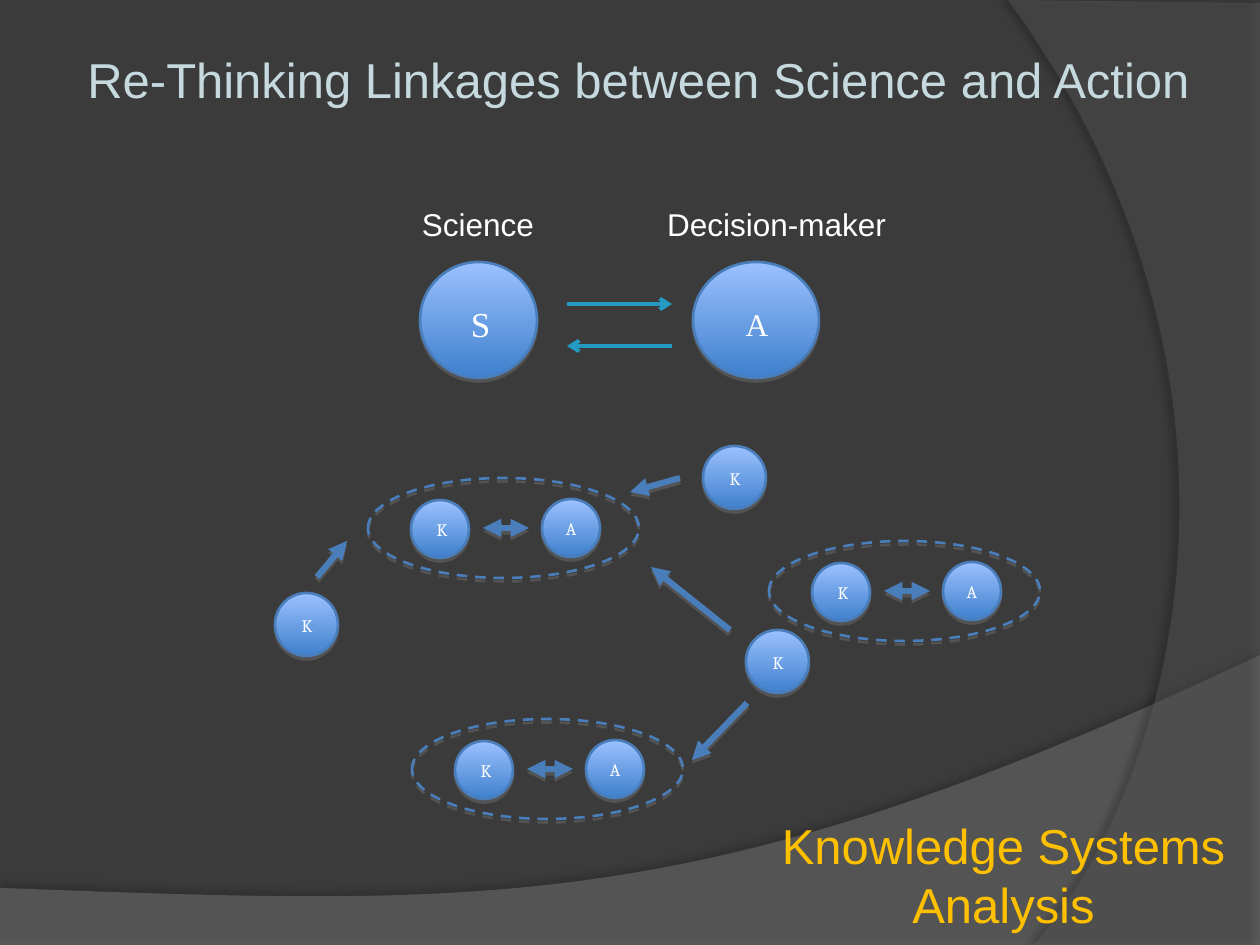
"""Build the slide on linkages between science and action."""
from lxml import etree
from pptx import Presentation
from pptx import util as u
from pptx.dml.color import RGBColor
from pptx.enum import dml, shapes, text
from pptx.oxml.ns import qn

BACKGROUND = RGBColor(0x3B, 0x3B, 0x3B)
WAVE = RGBColor(0x7F, 0x7F, 0x7F)
ARC = RGBColor(0x5E, 0x5E, 0x5E)
TITLE = RGBColor(0xC5, 0xD9, 0xDF)
WHITE = RGBColor(0xFF, 0xFF, 0xFF)
GOLD = RGBColor(0xFF, 0xC0, 0x00)
TEAL = RGBColor(0x23, 0x9B, 0xC2)
BLUE = RGBColor(0x4A, 0x7E, 0xBB)
NODE_TOP = RGBColor(0x9B, 0xC1, 0xFF)
NODE_BOTTOM = RGBColor(0x3F, 0x80, 0xCD)
BLACK = RGBColor(0, 0, 0)
GREY = RGBColor(0x80, 0x80, 0x80)
SOFT_SHADOW = (GREY, 35, 0, 2, 90)


class Diagram:
    """Hold the style and the current slide."""

    def __init__(self, presentation):
        self.scale = u.Inches(1) / 126
        presentation.slide_width = self.px(1260)
        presentation.slide_height = self.px(945)
        self.slide = presentation.slides.add_slide(presentation.slide_layouts[6])
        fill = self.slide.background.fill
        fill.solid()
        fill.fore_color.rgb = BACKGROUND
        self.canvas = self.slide.shapes

    def px(self, length):
        return u.Emu(round(length * self.scale))

    def box(self, *lengths):
        return [self.px(length) for length in lengths]

    def apply(self, target, values):
        for name, value in values.items():
            setattr(target, name, value)

    def group(self):
        return self.slide.shapes.add_group_shape().shapes

    def alpha(self, color, percent):
        etree.SubElement(color, qn("a:alpha"), val=str(percent * 1000))

    def shadow(self, shape, color, opacity, blur, distance, angle):
        properties = shape._element.spPr
        effects = properties.find(qn("a:effectLst"))
        if effects is None:
            effects = etree.SubElement(properties, qn("a:effectLst"))
        outer = etree.SubElement(
            effects, qn("a:outerShdw"), blurRad=str(u.Pt(blur)),
            dist=str(u.Pt(distance)), dir=str(angle * 60000), rotWithShape="0")
        self.alpha(etree.SubElement(outer, qn("a:srgbClr"), val=str(color)), opacity)

    def band(self, corners, controls, end, color, opacity, shadow):
        curve = (corners[-1], *controls, end)
        points = list(corners)
        for step in range(1, 61):
            t = step / 60
            weights = ((1 - t) ** 3, 3 * t * (1 - t) ** 2, 3 * t * t * (1 - t), t ** 3)
            points.append([sum(w * p[axis] for w, p in zip(weights, curve)) for axis in (0, 1)])
        points = [self.box(*point) for point in points]
        builder = self.canvas.build_freeform(*points[0])
        builder.add_line_segments(points[1:], close=True)
        shape = builder.convert_to_shape()
        shape.shadow.inherit = False
        shape.fill.solid()
        shape.fill.fore_color.rgb = color
        self.alpha(shape._element.spPr.find(qn("a:solidFill"))[0], opacity)
        shape.line.fill.background()
        self.shadow(shape, *shadow)

    def label(self, words, bounds, size, color=WHITE, font="Arial", canvas=None,
              after=0, **frame_format):
        shape = (canvas or self.canvas).add_textbox(*self.box(*bounds))
        frame = shape.text_frame
        self.apply(frame, {"word_wrap": True, **frame_format})
        paragraph = frame.paragraphs[0]
        self.apply(paragraph, {"alignment": text.PP_ALIGN.CENTER, "space_after": u.Pt(after)})
        run = paragraph.add_run()
        run.text = words
        self.apply(run.font, {"size": u.Pt(size), "name": font})
        run.font.color.rgb = color

    def ellipse(self, bounds, canvas, filled=True):
        shape = canvas.add_shape(shapes.MSO_SHAPE.OVAL, *self.box(*bounds))
        shape.shadow.inherit = False
        shape.line.color.rgb = BLUE
        shape.line.width = u.Pt(1.5)
        if filled:
            shape.fill.gradient()
            shape.fill.gradient_angle = 270
            for stop, position, color in zip(
                    shape.fill.gradient_stops, (0, 1), (NODE_TOP, NODE_BOTTOM)):
                stop.position = position
                stop.color.rgb = color
        else:
            shape.fill.background()
            shape.line.dash_style = dml.MSO_LINE.DASH
        self.shadow(shape, *SOFT_SHADOW)

    def node(self, letter, bounds, label_bounds, size=10, font="Cambria", canvas=None, after=0):
        canvas = canvas or self.group()
        self.ellipse(bounds, canvas)
        inset = u.Inches(0.1)
        self.label(letter, label_bounds, size, font=font, canvas=canvas, after=after,
                   margin_top=inset, margin_bottom=inset)

    def arrow(self, start, end, color=BLUE, width=3.5, ends=("tailEnd",),
              head="triangle", shadow=SOFT_SHADOW, canvas=None):
        connector = (canvas or self.canvas).add_connector(
            shapes.MSO_CONNECTOR.STRAIGHT, *self.box(*start, *end))
        connector.line.color.rgb = color
        connector.line.width = u.Pt(width)
        for name in ends:
            etree.SubElement(connector.line._get_or_add_ln(), qn("a:" + name), type=head)
        if shadow:
            self.shadow(connector, *shadow)
        else:
            etree.SubElement(connector._element.spPr, qn("a:effectLst"))

    def lone_node(self, x, y):
        self.node("K", (x, y, 63, 63), (x + 3, y + 11, 58, 48))

    def cluster(self, x, y):
        canvas = self.group()
        self.ellipse((x, y, 271, 100), canvas, filled=False)
        for letter, left, top, width, height in (("K", 43, 22, 54, 44), ("A", 174, 21, 50, 42)):
            self.node(letter, (x + left, y + top, 58, 58),
                      (x + left + 4, y + top + 8, width, height), canvas=canvas)
        self.arrow((x + 115, y + 50), (x + 161, y + 50), ends=("headEnd", "tailEnd"),
                   canvas=canvas)


def main():
    presentation = Presentation()
    diagram = Diagram(presentation)
    diagram.band([(0, 888), (0, 946), (1260, 946), (1260, 655)],
                 [(704, 919), (493, 906)], (0, 888), WAVE, 45, (BLACK, 35, 4, 3.5, 270))
    diagram.band([(1260, 3), (1260, 945), (1034, 945)],
                 [(1178, 780), (1283, 378)], (1008, 0), ARC, 40, (BLACK, 45, 4, 4, 180))
    diagram.label("Re-Thinking Linkages between Science and Action ", (73, 0, 1144, 158),
                  28, TITLE, vertical_anchor=text.MSO_ANCHOR.MIDDLE)

    diagram.node("S", (420, 262, 117, 116), (427, 290, 107, 78), 20, "Times New Roman", after=10)
    diagram.node("A", (693, 262, 126, 116), (703, 292, 108, 60), 18, "Times New Roman", after=10)
    diagram.label("Science", (368, 199, 220, 50), 18)
    diagram.label("Decision-maker", (640, 199, 273, 50), 18)
    for start, end in (((567, 304), (672, 304)), ((672, 346), (567, 346))):
        diagram.arrow(start, end, TEAL, 2.25, head="arrow", shadow=None)

    for corner in ((368, 478), (412, 719), (769, 541)):
        diagram.cluster(*corner)
    for corner in ((703, 446), (746, 630), (275, 593)):
        diagram.lone_node(*corner)
    for start, end in (((730, 630), (651, 567)), ((680, 478), (630, 492)),
                       ((317, 577), (347, 541)), ((747, 703), (692, 760))):
        diagram.arrow(start, end)
    diagram.label("Knowledge Systems Analysis", (725, 809, 557, 131), 28, GOLD)
    presentation.save("out.pptx")


if __name__ == "__main__":
    main()
